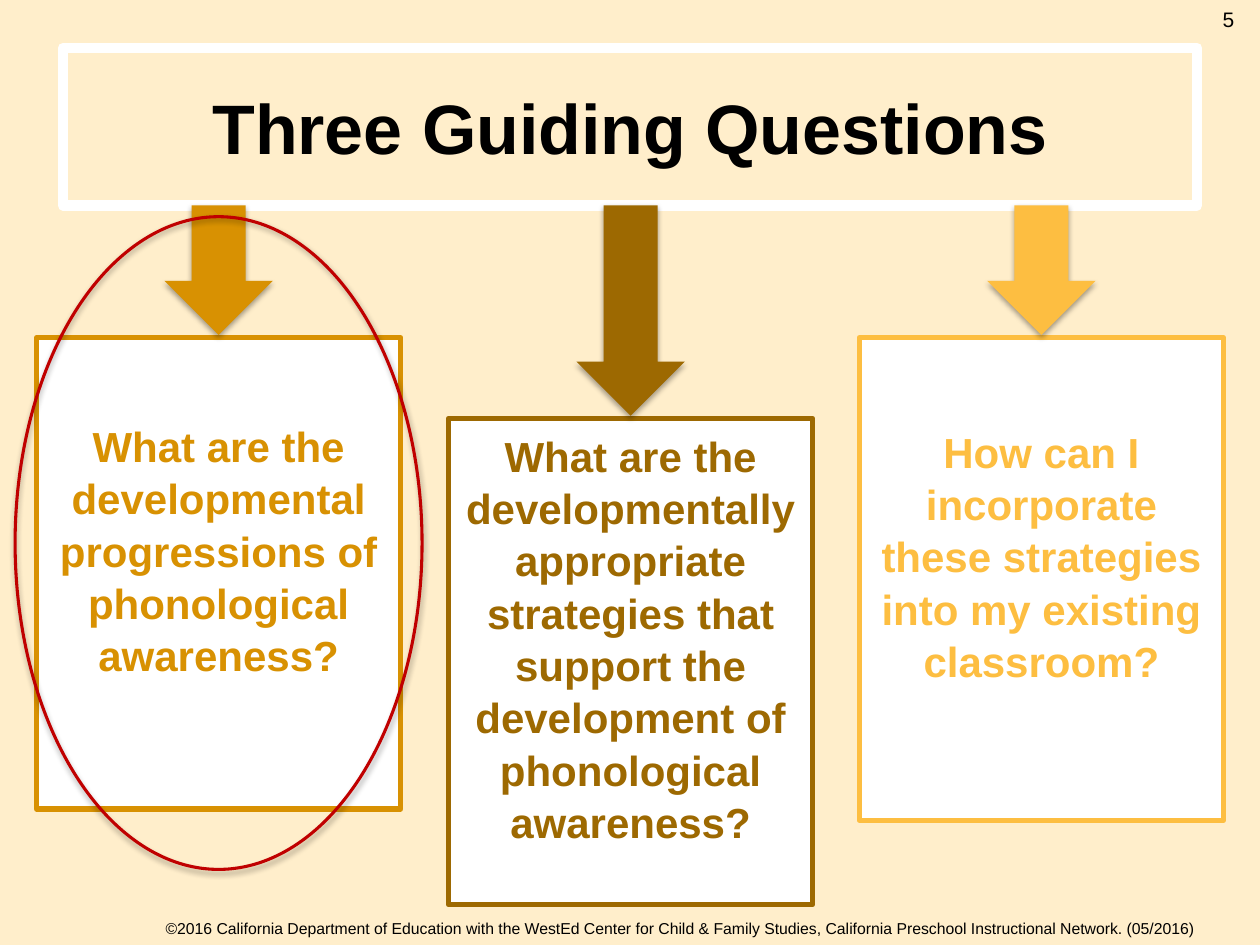
from lxml import etree
from pptx import Presentation
from pptx import util as u
from pptx.dml.color import RGBColor
from pptx.enum import shapes, text
from pptx.oxml import ns

COLORS = {
    "back": "FFEECB", "white": "FFFFFF", "black": "000000",
    "gold": "D89102", "brown": "9D6901", "amber": "FDBE41", "red": "C00000",
}
FONT = "Arial"
BASE = 1.63  # lower edge of the title frame, where arrows start
WIDE = 2.89  # card width

# question, colour, left, top, height
CARDS = [
    ("What are the developmental progressions of phonological awareness?",
     "gold", 0.29, 2.68, 3.74),
    ("What are the developmentally appropriate strategies that support "
     "the development of phonological awareness?",
     "brown", 3.56, 3.32, 3.86),
    ("How can I incorporate these strategies into my existing classroom?",
     "amber", 6.82, 2.68, 3.83),
]


def rgb(name):
    return RGBColor.from_string(COLORS[name])


def place(shape, box):
    shape.left, shape.top, shape.width, shape.height = map(u.Inches, box)


def outline(shape, color, width):
    shape.line.color.rgb = rgb(color)
    shape.line.width = u.Pt(width)


def write(shape, words, size, color, bold=False, anchor=text.MSO_ANCHOR.MIDDLE):
    frame = shape.text_frame
    frame.text = words
    frame.word_wrap = True
    frame.auto_size = text.MSO_AUTO_SIZE.NONE
    frame.vertical_anchor = anchor
    para = frame.paragraphs[0]
    para.alignment = text.PP_ALIGN.CENTER
    para.space_before = u.Pt(0)
    font = para.runs[0].font
    font.name, font.size, font.bold = FONT, u.Pt(size), bold
    font.color.rgb = rgb(color)
    return para


def shade(shape):
    """Soft shadow falling straight down."""
    shape.shadow.inherit = False
    effects = shape._element.spPr.find(ns.qn("a:effectLst"))
    outer = etree.SubElement(effects, ns.qn("a:outerShdw"), blurRad="40000",
                             dist="23000", dir="5400000", rotWithShape="0")
    tint = etree.SubElement(outer, ns.qn("a:srgbClr"), val=COLORS["black"])
    etree.SubElement(tint, ns.qn("a:alpha"), val="35000")


def add_title(slide, box):
    title = slide.shapes.title
    place(title, box)
    outline(title, "white", 6)
    write(title, "Three Guiding Questions", 40, "black", True)


def add_arrow(slide, mid, top, end, color):
    size, thick = end - top, 0.86
    arrow = slide.shapes.add_shape(
        shapes.MSO_SHAPE.RIGHT_ARROW, u.Inches(mid - size / 2),
        u.Inches((top + end - thick) / 2), u.Inches(size), u.Inches(thick))
    arrow.rotation = 90
    arrow.fill.solid()
    arrow.fill.fore_color.rgb = rgb(color)
    arrow.line.fill.background()
    shade(arrow)


def add_card(card, box, words, color):
    place(card, box)
    card.fill.solid()
    card.fill.fore_color.rgb = rgb("white")
    outline(card, color, 3)
    para = write(card, words, 24, color, True)
    para.line_spacing = 1.04
    card.text_frame.margin_bottom = u.Inches(0.43)  # lifts the text
    props = para._p.get_or_add_pPr()
    props.set("marL", "0")
    props.set("indent", "0")
    etree.SubElement(props, ns.qn("a:buNone"))


def add_ring(slide, box):
    ring = slide.shapes.add_shape(shapes.MSO_SHAPE.FLOWCHART_CONNECTOR,
                                  *map(u.Inches, box))
    ring.fill.background()
    outline(ring, "red", 1.75)
    shade(ring)


def add_note(slide, box, words, size, anchor):
    note = slide.shapes.add_textbox(*map(u.Inches, box))
    write(note, words, size, "black", anchor=anchor)


def main():
    deck = Presentation()
    deck.slide_width, deck.slide_height = u.Inches(10), u.Inches(7.5)
    slide = deck.slides.add_slide(deck.slide_layouts[4])
    slide.background.fill.solid()
    slide.background.fill.fore_color.rgb = rgb("back")

    # Title and the three questions
    add_title(slide, (0.5, 0.38, 9, 1.25))
    _, *bodies, spare = slide.placeholders
    spare._element.getparent().remove(spare._element)
    for body, (words, color, left, top, high) in zip(bodies, CARDS):
        add_arrow(slide, left + WIDE / 2, BASE, top - 0.02, color)
        add_card(body, (left, top, WIDE, high), words, color)

    # Highlight on the first question
    add_ring(slide, (0.12, 1.72, 3.23, 5.18))

    # Page number and copyright line
    add_note(slide, (9.5, 0, 0.5, 0.4), "5", 12, text.MSO_ANCHOR.TOP)
    add_note(slide, (0.79, 7.24, 9.21, 0.25),
             "©2016 California Department of Education with the WestEd Center "
             "for Child & Family Studies, California Preschool Instructional "
             "Network. (05/2016)", 9, text.MSO_ANCHOR.MIDDLE)
    deck.save("out.pptx")


if __name__ == "__main__":
    main()
